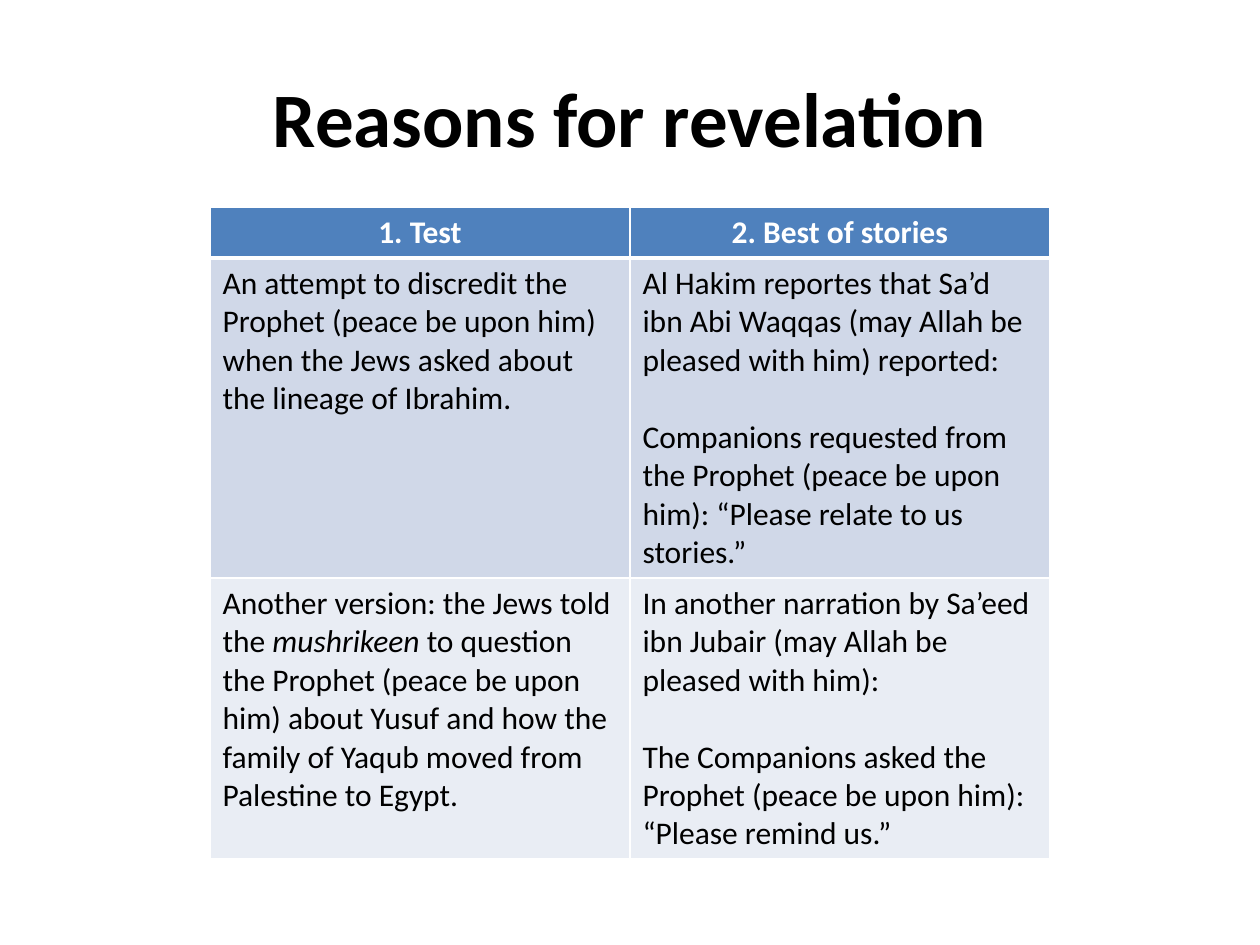
"""Build the "Reasons for revelation" slide with its two-column table."""
from lxml.etree import SubElement
from pptx import Presentation
from pptx.dml.color import RGBColor
from pptx.enum.text import MSO_ANCHOR, PP_ALIGN
from pptx.oxml.ns import qn
from pptx.util import Pt

SCALE = 914400 // 126
FONT = "Calibri"
COLORS = {
    "text": "000000",
    "white": "FFFFFF",
    "header": "4F81BD",
    "band_dark": "D0D8E8",
    "band_light": "E9EDF4",
}
TITLE = "Reasons for revelation"
ITALIC_WORD = "mushrikeen "
ROWS = [
    (51, "header", [["1. Test"], ["2. Best of stories"]]),
    (320, "band_dark", [
        ["An attempt to discredit the Prophet (peace be upon him) when the Jews "
         "asked about the lineage of Ibrahim."],
        ["Al Hakim reportes that Sa’d ibn Abi Waqqas (may Allah be pleased with "
         "him) reported:",
         "Companions requested from the Prophet (peace be upon him): “Please "
         "relate to us stories.”"],
    ]),
    (281, "band_light", [
        ["Another version: the Jews told the mushrikeen to question the Prophet "
         "(peace be upon him) about Yusuf and how the family of Yaqub moved from "
         "Palestine to Egypt."],
        ["In another narration by Sa’eed ibn Jubair (may Allah be pleased with him):",
         "The Companions asked the Prophet (peace be upon him): “Please remind us.”"],
    ]),
]
TITLE_BOX = (63, 38, 1134, 157)
TABLE_LEFT, TABLE_TOP, COLUMN_WIDTH = 210, 207, 420


def px(length):
    return length * SCALE


def rgb(name):
    return RGBColor.from_string(COLORS[name])


def write_paragraph(paragraph, text, size, color, bold, alignment):
    before, word, after = text.partition(ITALIC_WORD)
    paragraph.alignment = alignment
    for part in filter(None, (before, word, after)):
        run = paragraph.add_run()
        run.text = part
        run.font.name = FONT
        run.font.size = Pt(size)
        run.font.bold = bold
        run.font.italic = part == ITALIC_WORD
        run.font.color.rgb = rgb(color)


def add_borders(cell, widths):
    properties = cell._tc.get_or_add_tcPr()
    for side, width in widths.items():
        line = SubElement(properties, qn(f"a:ln{side}"), w=str(Pt(width)))
        fill = SubElement(line, qn("a:solidFill"))
        SubElement(fill, qn("a:srgbClr"), val=COLORS["white"])


def add_title(slide):
    text_frame = slide.shapes.add_textbox(*map(px, TITLE_BOX)).text_frame
    text_frame.word_wrap = True
    text_frame.vertical_anchor = MSO_ANCHOR.MIDDLE
    write_paragraph(text_frame.paragraphs[0], TITLE, 44, "text", True, PP_ALIGN.CENTER)


def fill_cell(cell, paragraphs, fill, row_index):
    is_header = row_index == 0
    add_borders(cell, {"L": 1, "R": 1, "T": 3 if row_index == 1 else 1,
                       "B": 3 if is_header else 1})
    cell.fill.solid()
    cell.fill.fore_color.rgb = rgb(fill)
    for index, text in enumerate(paragraphs):
        paragraph = cell.text_frame.add_paragraph() if index else cell.text_frame.paragraphs[0]
        paragraph.space_before = Pt(22 if index else 0)
        write_paragraph(paragraph, text, 18, "white" if is_header else "text",
                        is_header, PP_ALIGN.CENTER if is_header else PP_ALIGN.LEFT)


def add_reasons_table(slide):
    column_count = len(ROWS[0][2])
    height = sum(row_height for row_height, _, _ in ROWS)
    table = slide.shapes.add_table(
        len(ROWS), column_count, px(TABLE_LEFT), px(TABLE_TOP),
        px(COLUMN_WIDTH * column_count), px(height)).table
    for row_index, (row_height, fill, cells) in enumerate(ROWS):
        table.rows[row_index].height = px(row_height)
        for column_index, paragraphs in enumerate(cells):
            fill_cell(table.cell(row_index, column_index), paragraphs, fill, row_index)


def main():
    presentation = Presentation()
    presentation.slide_width, presentation.slide_height = px(1260), px(945)
    slide = presentation.slides.add_slide(presentation.slide_layouts[6])
    add_title(slide)
    add_reasons_table(slide)
    presentation.save("out.pptx")


if __name__ == "__main__":
    main()
